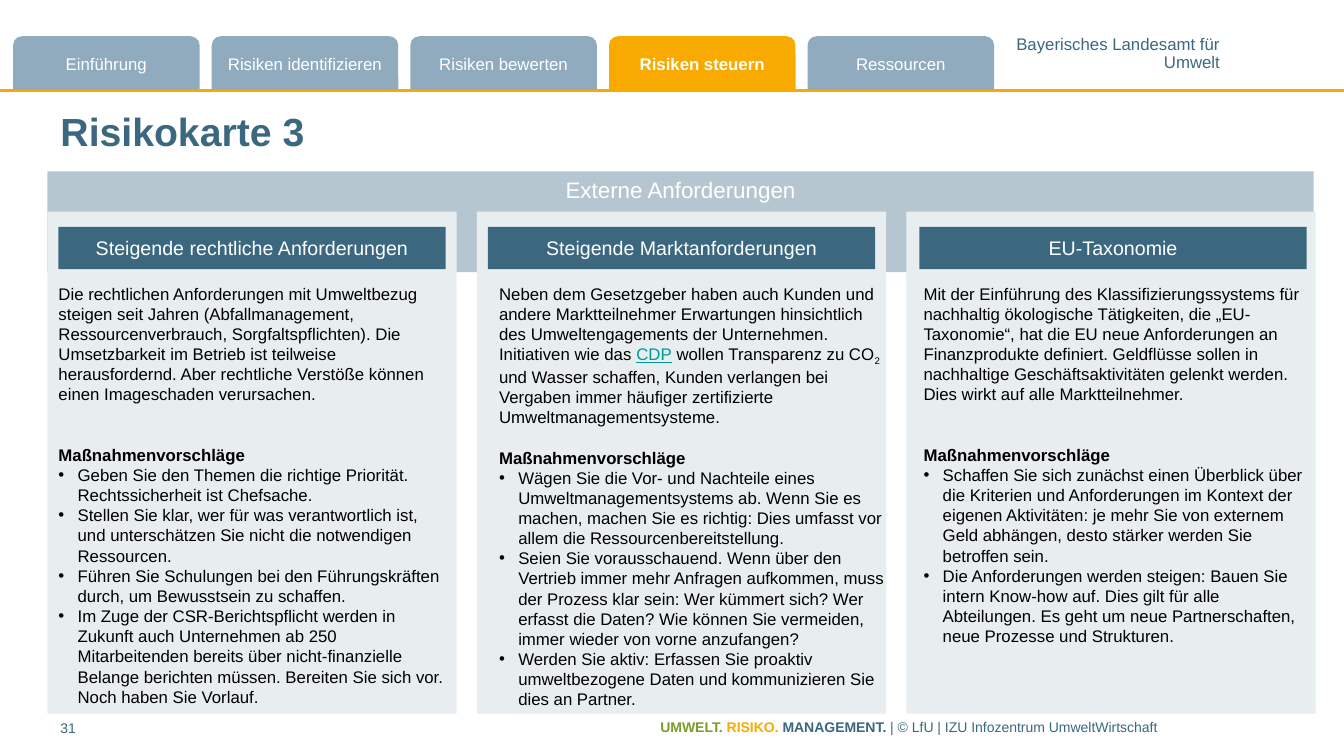
from dataclasses import dataclass

from lxml import etree
from pptx import Presentation
from pptx.dml.color import RGBColor
from pptx.enum.shapes import MSO_CONNECTOR, MSO_SHAPE
from pptx.enum.text import MSO_ANCHOR, MSO_AUTO_SIZE, PP_ALIGN
from pptx.oxml.ns import qn
from pptx.util import Inches, Pt

LEFT, CENTER, RIGHT = PP_ALIGN.LEFT, PP_ALIGN.CENTER, PP_ALIGN.RIGHT
TOP, MIDDLE = MSO_ANCHOR.TOP, MSO_ANCHOR.MIDDLE
RECTANGLE, TAB = MSO_SHAPE.RECTANGLE, MSO_SHAPE.ROUND_2_SAME_RECTANGLE
COMPARISON_LAYOUT = 4


@dataclass(frozen=True)
class Theme:
    font: str = "Arial"
    blue: str = "3B687F"
    tab: str = "90ABBE"
    band: str = "B6C6D0"
    panel: str = "E8EDF0"
    orange: str = "F9AA00"
    green: str = "7B9C2A"
    link: str = "009999"
    white: str = "FFFFFF"
    black: str = "000000"
    title_size: int = 28
    band_size: int = 16
    heading_size: int = 14
    body_size: int = 12
    footer_size: int = 10
    line_height: float = 14.4


THEME = Theme()


def fill_text(shape, paragraphs, size, color, align=LEFT, anchor=TOP,
              insets=(0, 0.05, 0, 0.05), wrap=True):
    """Write (spans, options) paragraphs; a span is (text, font overrides)."""
    frame = shape.text_frame
    frame_format = {"word_wrap": wrap, "auto_size": MSO_AUTO_SIZE.NONE,
                    "vertical_anchor": anchor}
    sides = ("margin_left", "margin_top", "margin_right", "margin_bottom")
    frame_format.update(zip(sides, map(Inches, insets)))
    for name, value in frame_format.items():
        setattr(frame, name, value)
    for index, (spans, options) in enumerate(paragraphs):
        para = frame.paragraphs[0] if index == 0 else frame.add_paragraph()
        para_format = {"alignment": align, "space_after": Pt(0),
                       "space_before": Pt(options.get("before", 0)),
                       "line_spacing": options.get("spacing", 1.0)}
        for name, value in para_format.items():
            setattr(para, name, value)
        properties = para._p.get_or_add_pPr()
        bullet = options.get("bullet", False)
        indent = Inches(0.19) if bullet else 0
        properties.set("marL", str(indent))
        properties.set("indent", str(-indent))
        if bullet:
            etree.SubElement(properties, qn("a:buFont")).set("typeface", THEME.font)
            etree.SubElement(properties, qn("a:buChar")).set("char", "•")
        else:
            etree.SubElement(properties, qn("a:buNone"))
        for text, overrides in spans:
            span = para.add_run()
            span.text = text
            font_format = {"name": THEME.font, "size": Pt(size),
                           "bold": overrides.get("bold", False),
                           "underline": overrides.get("underline", False)}
            for name, value in font_format.items():
                setattr(span.font, name, value)
            span.font.color.rgb = RGBColor.from_string(overrides.get("color", color))
            if "baseline" in overrides:
                span._r.get_or_add_rPr().set("baseline", str(overrides["baseline"]))


def add_block(page, kind, place, color):
    block = page.shapes.add_shape(kind, *map(Inches, place))
    block.shadow.inherit = False
    block.fill.solid()
    block.fill.fore_color.rgb = RGBColor.from_string(color)
    block.line.fill.background()
    return block


deck = Presentation()
deck.slide_width, deck.slide_height = Inches(13.33), Inches(7.5)
page = deck.slides.add_slide(deck.slide_layouts[COMPARISON_LAYOUT])
title, *bodies = page.placeholders

# Navigation
rule = page.shapes.add_connector(MSO_CONNECTOR.STRAIGHT, 0, Inches(0.9),
                                 deck.slide_width, Inches(0.9))
rule.line.color.rgb = RGBColor.from_string(THEME.orange)
rule.line.width = Pt(2)
etree.SubElement(rule.element.spPr, qn("a:effectLst"))

office = page.shapes.add_textbox(*map(Inches, (10.07, 0.37, 2.03, 0.34)))
office_lines = [([(line, {})], {"spacing": 0.85})
                for line in ("Bayerisches Landesamt für", "Umwelt")]
fill_text(office, office_lines, THEME.body_size, THEME.blue, RIGHT,
          insets=(0, 0, 0, 0), wrap=False)

tabs = ("Einführung", "Risiken identifizieren", "Risiken bewerten",
        "Risiken steuern", "Ressourcen")
for index, label in enumerate(tabs):
    active = label == "Risiken steuern"
    tab = add_block(page, TAB, (0.13 + 1.97 * index, 0.36, 1.85, 0.53),
                    THEME.orange if active else THEME.tab)
    fill_text(tab, [([(label, {"bold": active})], {})], THEME.body_size,
              THEME.white, CENTER, MIDDLE, (0.04, 0.05, 0.04, 0.05))

# Title and band
title.left, title.top, title.width, title.height = map(Inches, (0.6, 1.02, 12.31, 0.55))
fill_text(title, [([("Risikokarte 3", {"bold": True})], {})],
          THEME.title_size, THEME.blue, anchor=MIDDLE)
band = add_block(page, RECTANGLE, (0.47, 1.7, 12.56, 1), THEME.band)
fill_text(band, [([("Externe Anforderungen", {})], {})], THEME.band_size,
          THEME.white, CENTER, insets=(0.1, 0.05, 0.1, 0.05))

# Columns
columns = [
    {"heading": "Steigende rechtliche Anforderungen",
     "heading_left": 0.58, "text_left": 0.58, "height": 4.34, "gap_lines": 2,
     "intro": [("Die rechtlichen Anforderungen mit Umweltbezug steigen seit Jahren (Abfallmanagement, Ressourcenverbrauch, Sorgfaltspflichten). Die Umsetzbarkeit im Betrieb ist teilweise herausfordernd. Aber rechtliche Verstöße können einen Imageschaden verursachen.", {})],
     "measures": [
         "Geben Sie den Themen die richtige Priorität. Rechtssicherheit ist Chefsache.",
         "Stellen Sie klar, wer für was verantwortlich ist, und unterschätzen Sie nicht die notwendigen Ressourcen.",
         "Führen Sie Schulungen bei den Führungskräften durch, um Bewusstsein zu schaffen.",
         "Im Zuge der CSR-Berichtspflicht werden in Zukunft auch Unternehmen ab 250 Mitarbeitenden bereits über nicht-finanzielle Belange berichten müssen. Bereiten Sie sich vor. Noch haben Sie Vorlauf."]},
    {"heading": "Steigende Marktanforderungen",
     "heading_left": 4.84, "text_left": 4.95, "height": 4.34, "gap_lines": 1,
     "intro": [
         ("Neben dem Gesetzgeber haben auch Kunden und andere Marktteilnehmer Erwartungen hinsichtlich des Umweltengagements der Unternehmen. Initiativen wie das ", {}),
         ("CDP", {"color": THEME.link, "underline": True}),
         (" wollen Transparenz zu CO", {}),
         ("2", {"baseline": -25000}),
         (" und Wasser schaffen, Kunden verlangen bei Vergaben immer häufiger zertifizierte Umweltmanagementsysteme.", {})],
     "measures": [
         "Wägen Sie die Vor- und Nachteile eines Umweltmanagementsystems ab. Wenn Sie es machen, machen Sie es richtig: Dies umfasst vor allem die Ressourcenbereitstellung.",
         "Seien Sie vorausschauend. Wenn über den Vertrieb immer mehr Anfragen aufkommen, muss der Prozess klar sein: Wer kümmert sich? Wer erfasst die Daten? Wie können Sie vermeiden, immer wieder von vorne anzufangen?",
         "Werden Sie aktiv: Erfassen Sie proaktiv umweltbezogene Daten und kommunizieren Sie dies an Partner."]},
    {"heading": "EU-Taxonomie",
     "heading_left": 9.12, "text_left": 9.16, "height": 3.74, "gap_lines": 2,
     "intro": [("Mit der Einführung des Klassifizierungssystems für nachhaltig ökologische Tätigkeiten, die „EU-Taxonomie“, hat die EU neue Anforderungen an Finanzprodukte definiert. Geldflüsse sollen in nachhaltige Geschäftsaktivitäten gelenkt werden. Dies wirkt auf alle Marktteilnehmer.", {})],
     "measures": [
         "Schaffen Sie sich zunächst einen Überblick über die Kriterien und Anforderungen im Kontext der eigenen Aktivitäten: je mehr Sie von externem Geld abhängen, desto stärker werden Sie betroffen sein.",
         "Die Anforderungen werden steigen: Bauen Sie intern Know-how auf. Dies gilt für alle Abteilungen. Es geht um neue Partnerschaften, neue Prozesse und Strukturen."]},
]
for index, (column, body) in enumerate(zip(columns, bodies)):
    add_block(page, RECTANGLE, (0.47 + 4.26 * index, 2.1, 4.06, 4.98), THEME.panel)
    heading = add_block(page, RECTANGLE, (column["heading_left"], 2.25, 3.84, 0.42), THEME.blue)
    fill_text(heading, [([(column["heading"], {})], {})], THEME.heading_size,
              THEME.white, CENTER, MIDDLE, (0.1, 0.05, 0.1, 0.05))
    body.left, body.top, body.width, body.height = map(
        Inches, (column["text_left"], 2.76, 3.84, column["height"]))
    gap = column["gap_lines"] * THEME.line_height
    paragraphs = [(column["intro"], {}),
                  ([("Maßnahmenvorschläge", {"bold": True})], {"before": gap})]
    paragraphs += [([(measure, {})], {"bullet": True}) for measure in column["measures"]]
    fill_text(body, paragraphs, THEME.body_size, THEME.black)
    page.shapes.element.append(body.element)  # lifts the text above its panel
for unused in bodies[len(columns):]:
    unused.element.getparent().remove(unused.element)

# Footer
number = page.shapes.add_textbox(*map(Inches, (0.6, 7.09, 0.7, 0.31)))
fill_text(number, [([("31", {})], {})], THEME.footer_size, THEME.blue)
footer = page.shapes.add_textbox(*map(Inches, (6.55, 7.08, 6.36, 0.31)))
footer_spans = [("UMWELT. ", {"bold": True, "color": THEME.green}),
                ("RISIKO. ", {"bold": True, "color": THEME.orange}),
                ("MANAGEMENT. ", {"bold": True}),
                ("| © LfU | IZU Infozentrum UmweltWirtschaft", {})]
fill_text(footer, [(footer_spans, {})], THEME.footer_size, THEME.blue)

deck.save("out.pptx")
